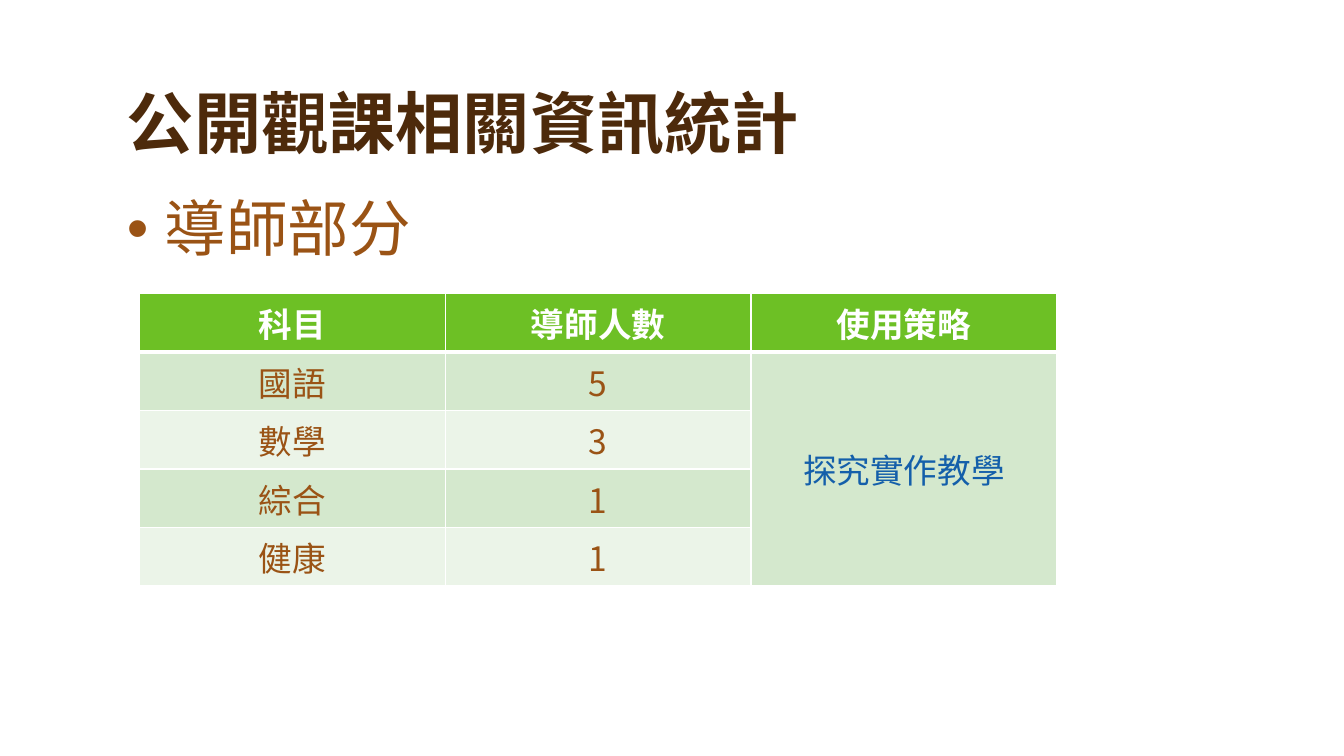
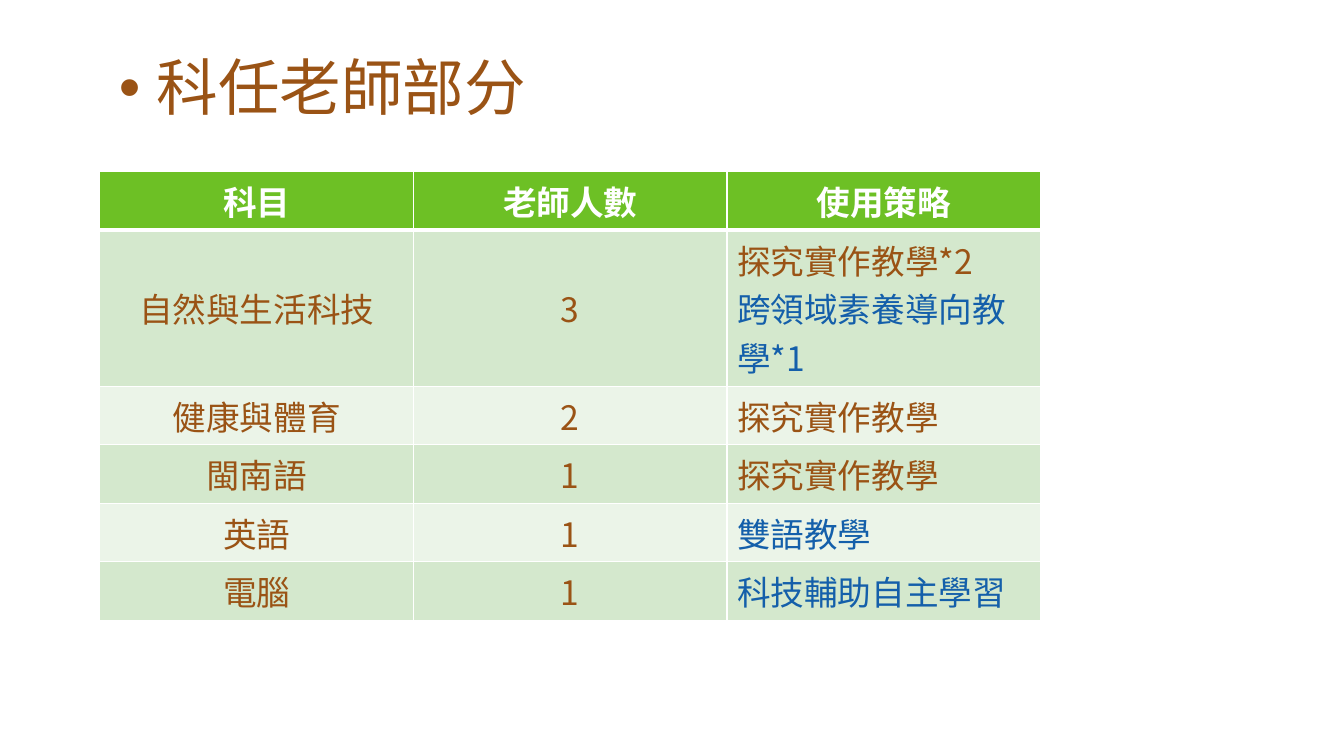
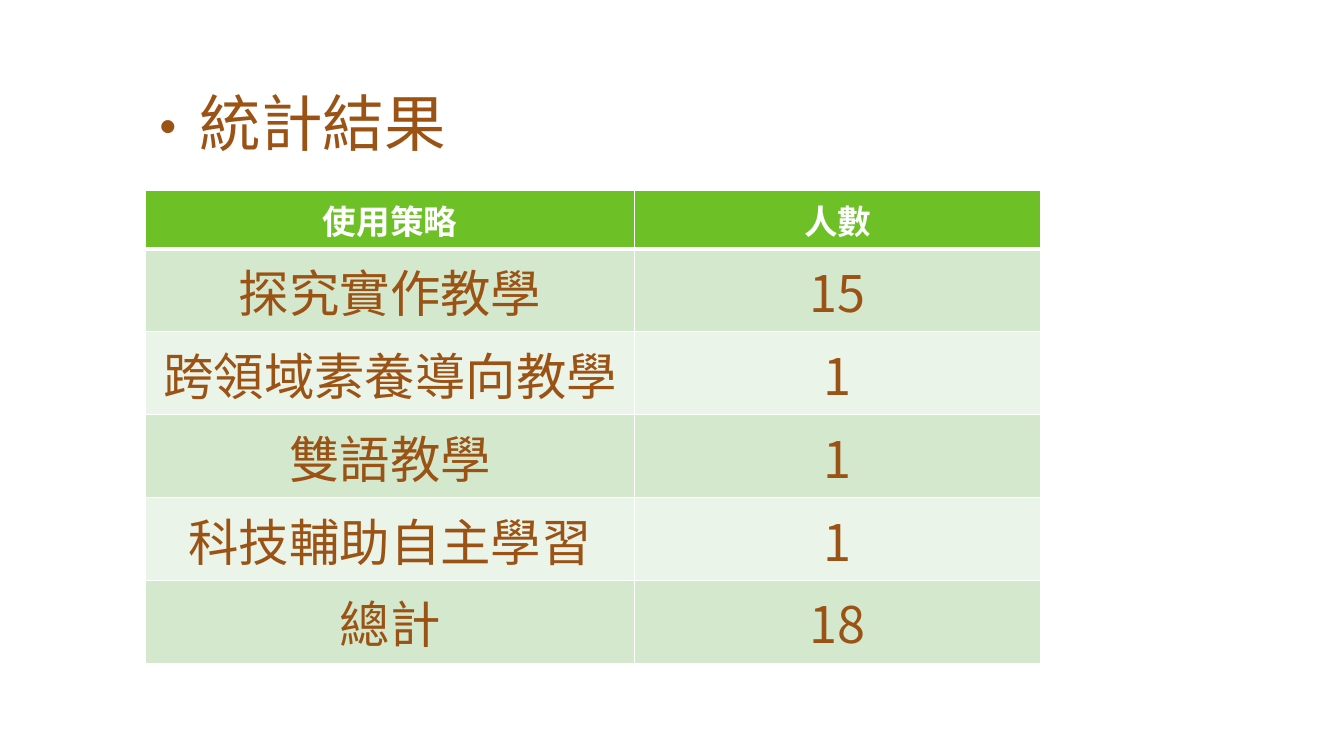
from dataclasses import dataclass

from lxml.etree import SubElement
from pptx import Presentation
from pptx.dml.color import RGBColor
from pptx.enum.text import MSO_ANCHOR, MSO_AUTO_SIZE, PP_ALIGN
from pptx.oxml import parse_xml
from pptx.oxml.ns import nsdecls, qn
from pptx.util import Pt


@dataclass(frozen=True)
class Theme:
    face: str = "Noto Sans CJK TC"
    dark: str = "4D2A0B"
    brown: str = "9A5315"
    blue: str = "145FAA"
    white: str = "FFFFFF"
    green: str = "6DC025"
    bands: tuple = ("D4E8CD", "EBF4E8")
    title: int = 48
    lead: int = 44
    cell: int = 24
    big: int = 36
    tight: float = 0.9
    thin: int = 1
    thick: int = 3


class Deck:
    def __init__(self, theme):
        self.theme = theme
        self.show = Presentation()
        self.show.slide_width = Pt(960)
        self.show.slide_height = Pt(540)
        self.slide = None

    def page(self, title=None):
        layout = self.show.slide_layouts[5 if title else 6]
        self.slide = self.show.slides.add_slide(layout)
        if title:
            self.head(title)

    def head(self, text):
        shape = self.slide.shapes.title
        shape.left, shape.top = Pt(83.5), Pt(35.3)
        shape.width, shape.height = Pt(792), Pt(85)
        frame = shape.text_frame
        frame.text = text
        frame.word_wrap = True
        frame.auto_size = MSO_AUTO_SIZE.NONE
        frame.vertical_anchor = MSO_ANCHOR.BOTTOM
        para = frame.paragraphs[0]
        para.alignment = PP_ALIGN.LEFT
        para.line_spacing = self.theme.tight
        self.ink(para, self.theme.title, self.theme.dark, True)

    def ink(self, para, size, color, bold=False):
        for run in para.runs:
            font = run.font
            font.size = Pt(size)
            font.bold = bold
            font.color.rgb = RGBColor.from_string(color)
            font.name = self.theme.face
            SubElement(run._r.get_or_add_rPr(), qn("a:ea"), typeface=self.theme.face)

    def lead(self, text, left, top, height=380, indent=27, face="Arial"):
        box = self.slide.shapes.add_textbox(Pt(left), Pt(top), Pt(792), Pt(height))
        frame = box.text_frame
        frame.word_wrap = True
        frame.text = text
        para = frame.paragraphs[0]
        props = para._p.get_or_add_pPr()
        props.set("marL", str(Pt(indent)))
        props.set("indent", str(-Pt(indent)))
        SubElement(props, qn("a:buFont"), typeface=face)
        SubElement(props, qn("a:buChar"), char="•")
        para.line_spacing = self.theme.tight
        self.ink(para, self.theme.lead, self.theme.brown)

    def edge(self, cell, row):
        theme = self.theme
        heavy = {0: "B", 1: "T"}.get(row)
        props = cell._tc.get_or_add_tcPr()
        for spot, side in enumerate("LRTB"):
            width = Pt(theme.thick if side == heavy else theme.thin)
            props.insert(spot, parse_xml(
                f'<a:ln{side} {nsdecls("a")} w="{width}"><a:solidFill>'
                f'<a:srgbClr val="{theme.white}"/></a:solidFill></a:ln{side}>'))

    def table(self, left, top, widths, heights, rows, size=None, marks=(), flush=None):
        theme = self.theme
        grid = self.slide.shapes.add_table(
            len(rows), len(widths), Pt(left), Pt(top),
            Pt(sum(widths)), Pt(sum(heights))).table
        for col, width in zip(grid.columns, widths):
            col.width = Pt(width)
        for r, (row, height) in enumerate(zip(rows, heights)):
            grid.rows[r].height = Pt(height)
            fill = theme.bands[(r - 1) % 2] if r else theme.green
            for c, text in enumerate(row):
                cell = grid.cell(r, c)
                cell.text_frame.text = text
                cell.fill.solid()
                cell.fill.fore_color.rgb = RGBColor.from_string(fill)
                self.edge(cell, r)
                plain = r > 0 and c == flush
                cell.vertical_anchor = MSO_ANCHOR.TOP if plain else MSO_ANCHOR.MIDDLE
                for n, para in enumerate(cell.text_frame.paragraphs):
                    para.alignment = PP_ALIGN.LEFT if plain else PP_ALIGN.CENTER
                    if r == 0:
                        self.ink(para, theme.cell, theme.white, True)
                    else:
                        color = theme.blue if (r, c, n) in marks else theme.brown
                        self.ink(para, size or theme.cell, color)
        return grid


def main():
    theme = Theme()
    deck = Deck(theme)
    line = 41.8

    deck.page("公開觀課相關資訊統計")
    deck.lead("導師部分", 83.5, 138.2)
    grid = deck.table(99.7, 209.7, [218.4] * 3, [line] * 5, [
        ("科目", "導師人數", "使用策略"),
        ("國語", "5", "探究實作教學"),
        ("數學", "3", ""),
        ("綜合", "1", ""),
        ("健康", "1", ""),
    ], marks={(1, 2, 0)})
    grid.cell(1, 2).merge(grid.cell(4, 2))

    deck.page()
    deck.lead("科任老師部分", 77.8, 37.4)
    deck.table(71.3, 122.6, [224] * 3, [line, 111.5] + [line] * 4, [
        ("科目", "老師人數", "使用策略"),
        ("自然與生活科技", "3", "探究實作教學*2\n跨領域素養導向教學*1"),
        ("健康與體育", "2", "探究實作教學"),
        ("閩南語", "1", "探究實作教學"),
        ("英語", "1", "雙語教學"),
        ("電腦", "1", "科技輔助自主學習"),
    ], marks={(1, 2, 1), (4, 2, 0), (5, 2, 0)}, flush=2)

    deck.page()
    deck.lead("統計結果", 91.4, 63.4, 332.6, theme.lead, theme.face)
    deck.table(104, 136.1, [349.2, 290.2], [line] + [59.2] * 5, [
        ("使用策略", "人數"),
        ("探究實作教學", "15"),
        ("跨領域素養導向教學", "1"),
        ("雙語教學", "1"),
        ("科技輔助自主學習", "1"),
        ("總計", "18"),
    ], size=theme.big)

    deck.show.save("out.pptx")


if __name__ == "__main__":
    main()
